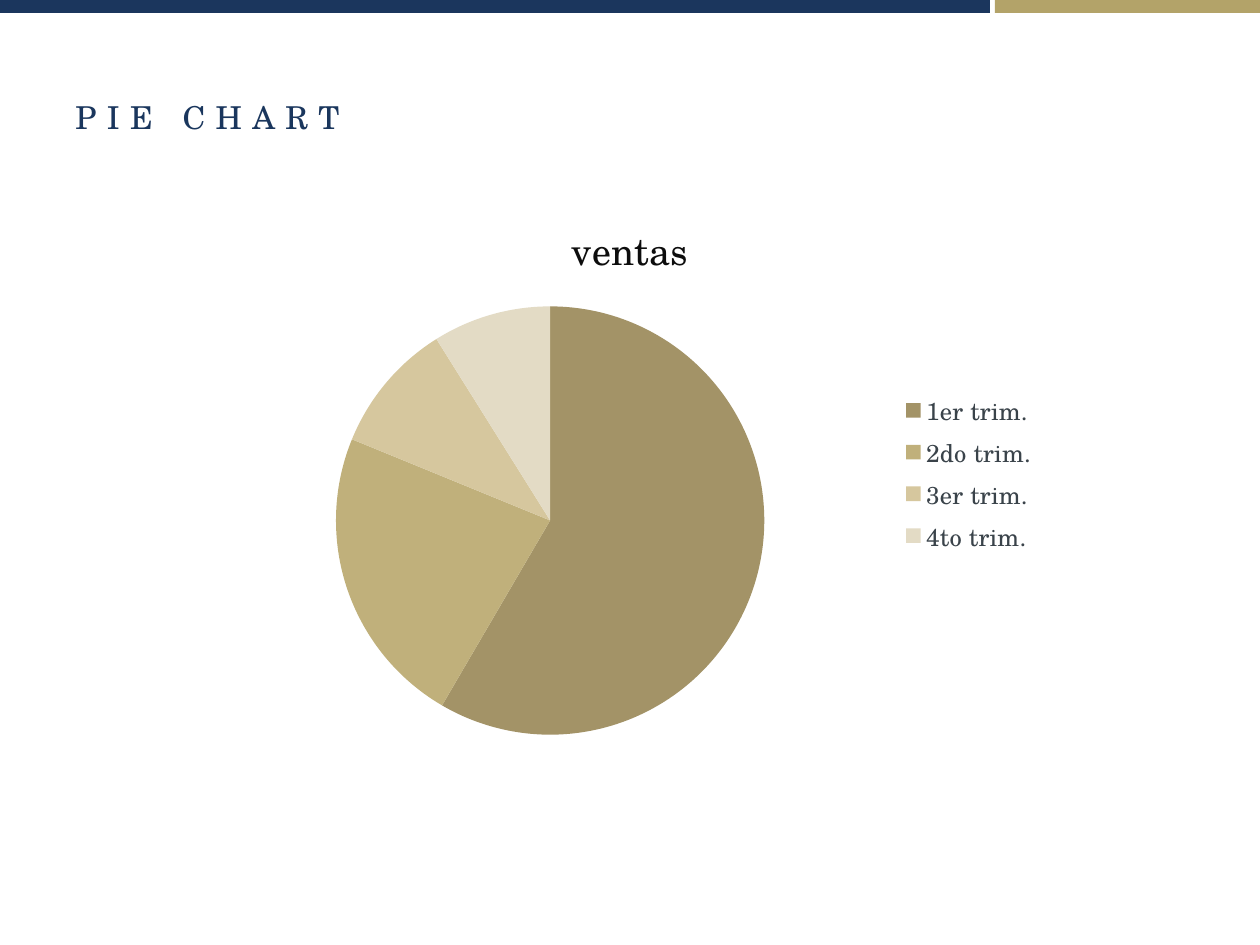
"""Build a slide with a title, a two-tone top bar and a pie chart."""
from pptx import Presentation
from pptx.chart.data import CategoryChartData
from pptx.dml.color import RGBColor
from pptx.enum.chart import XL_CHART_TYPE, XL_LEGEND_POSITION
from pptx.enum.shapes import MSO_SHAPE
from pptx.enum.text import MSO_ANCHOR
from pptx.oxml import parse_xml
from pptx.oxml.ns import nsdecls
from pptx.util import Pt

PX = 914400 // 126
FACE = "TeX Gyre Schola"
NAVY = RGBColor(0x1B, 0x36, 0x5D)
GOLD = RGBColor(0xB3, 0xA3, 0x69)
INK = RGBColor(0x1A, 0x36, 0x5D)
BLACK = RGBColor(0x0D, 0x0D, 0x0D)
SLATE = RGBColor(0x3A, 0x43, 0x4A)
TONES = [
    RGBColor(0xA3, 0x93, 0x67),
    RGBColor(0xC0, 0xB0, 0x7B),
    RGBColor(0xD6, 0xC7, 0x9E),
    RGBColor(0xE3, 0xDB, 0xC5),
]


def style(font, size, color):
    font.name = FACE
    font.size = Pt(size)
    font.bold = False
    font.color.rgb = color


def write(frame, text, size=18, color=INK, gap=0):
    run = frame.paragraphs[0].add_run()
    run.text = text
    style(run.font, size, color)
    if gap:
        run.font._element.set("spc", str(gap * 100))


deck = Presentation()
deck.slide_width = 1260 * PX
deck.slide_height = 945 * PX
slide = deck.slides.add_slide(deck.slide_layouts[6])

for left, width, color in [(0, 990, NAVY), (995, 265, GOLD)]:
    bar = slide.shapes.add_shape(
        MSO_SHAPE.RECTANGLE, left * PX, 0, width * PX, 13 * PX)
    bar.shadow.inherit = False
    bar.fill.solid()
    bar.fill.fore_color.rgb = color
    bar.line.fill.background()

title = slide.shapes.add_textbox(63 * PX, 38 * PX, 1134 * PX, 158 * PX)
frame = title.text_frame
frame.word_wrap = True
frame.vertical_anchor = MSO_ANCHOR.MIDDLE
write(frame, "PIE CHART", gap=6)

data = CategoryChartData()
data.categories = ["1er trim.", "2do trim.", "3er trim.", "4to trim."]
data.add_series("ventas", [59, 23, 10, 9])
chart = slide.shapes.add_chart(
    XL_CHART_TYPE.PIE, 210 * PX, 193 * PX, 840 * PX, 560 * PX, data).chart
style(chart.font, 18, BLACK)
chart.has_title = True
write(chart.chart_title.text_frame, "ventas", size=21.6, color=BLACK)
chart.chart_title.include_in_layout = False
chart.has_legend = True
chart.legend.position = XL_LEGEND_POSITION.RIGHT
chart.legend.include_in_layout = False
style(chart.legend.font, 14, SLATE)

plot = chart.plots[0]
plot.vary_by_categories = True
for index, tone in enumerate(TONES):
    slice = plot.series[0].points[index].format
    slice.fill.solid()
    slice.fill.fore_color.rgb = tone
    slice.line.fill.background()

area = chart._chartSpace.chart.plotArea
for old in area.xpath("c:layout"):
    area.remove(old)
area.insert(0, parse_xml(
    f'<c:layout {nsdecls("c")}><c:manualLayout>'
    '<c:layoutTarget val="inner"/><c:xMode val="edge"/><c:yMode val="edge"/>'
    '<c:x val="0.15"/><c:y val="0.2"/><c:w val="0.51"/><c:h val="0.77"/>'
    '</c:manualLayout></c:layout>'))

deck.save("out.pptx")
